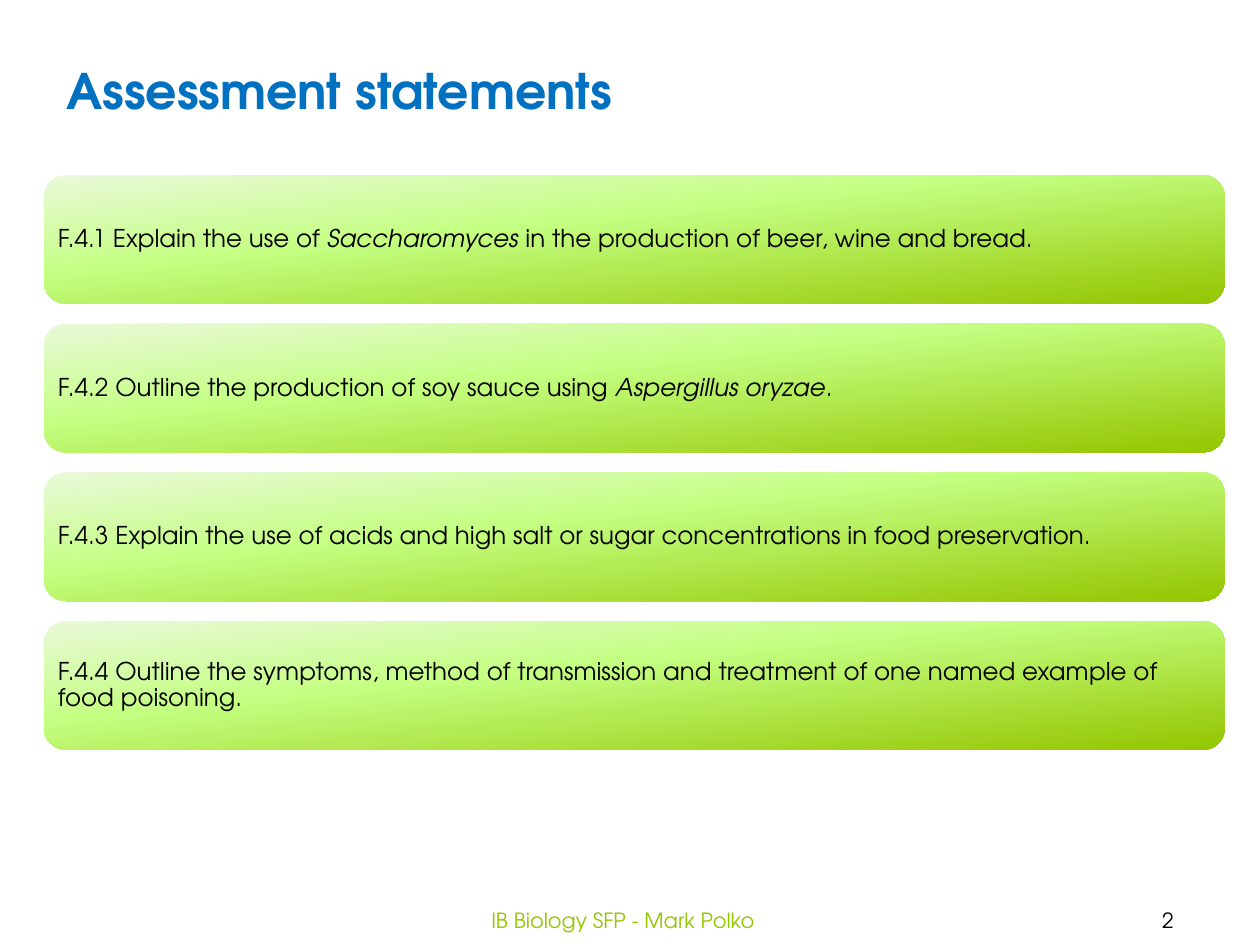
from copy import deepcopy

from pptx import Presentation
from pptx.dml.color import RGBColor
from pptx.enum.shapes import MSO_SHAPE
from pptx.enum.text import MSO_ANCHOR, PP_ALIGN
from pptx.oxml.ns import qn
from pptx.util import Inches, Pt

BLACK = RGBColor(0x00, 0x00, 0x00)
BLUE = RGBColor(0x00, 0x70, 0xC0)
GREEN = RGBColor(0x94, 0xC6, 0x00)
LIME = RGBColor(0xC4, 0xFF, 0x82)
PALE = RGBColor(0xEA, 0xF9, 0xDA)
FONT = "TeX Gyre Adventor"
GRADIENT = ((0, PALE), (0.4, LIME), (1, GREEN))
SIDES = ("left", "top", "right", "bottom")

STATEMENTS = (
    (("F.4.1 Explain the use of ", False), ("Saccharomyces ", True),
     ("in the production of beer, wine and bread.", False)),
    (("F.4.2 Outline the production of soy sauce using ", False),
     ("Aspergillus oryzae", True), (".", False)),
    (("F.4.3 Explain the use of acids and high salt or sugar "
      "concentrations in food preservation.", False),),
    (("F.4.4 Outline the symptoms, method of transmission and treatment "
      "of one named example of food poisoning.", False),),
)


def apply_format(target, values):
    for name, value in values.items():
        setattr(target, name, value)


class SlideBuilder:
    """Holds the slide and its style, and adds each kind of element."""

    def __init__(self, slide):
        self.slide = slide

    def add_runs(self, shape, runs, size, color, bold=False, **paragraph_format):
        paragraph = shape.text_frame.paragraphs[0]
        apply_format(paragraph, paragraph_format)
        for text, italic in runs:
            run = paragraph.add_run()
            run.text = text
            run.font.color.rgb = color
            apply_format(run.font, {"name": FONT, "size": Pt(size),
                                    "bold": bold, "italic": italic})

    def label(self, box, text, size, color, anchor=MSO_ANCHOR.MIDDLE,
              wrap=True, bold=False, align=PP_ALIGN.CENTER):
        shape = self.slide.shapes.add_textbox(*map(Inches, box))
        apply_format(shape.text_frame,
                     {"word_wrap": wrap, "vertical_anchor": anchor})
        self.add_runs(shape, ((text, False),), size, color, bold,
                      alignment=align)

    def card(self, box, runs):
        shape = self.slide.shapes.add_shape(
            MSO_SHAPE.ROUNDED_RECTANGLE, *map(Inches, box))
        shape.shadow.inherit = False
        shape.line.fill.background()
        self.fill_gradient(shape)
        frame_format = {f"margin_{side}": Inches(0.06) for side in SIDES}
        frame_format |= {"word_wrap": True, "vertical_anchor": MSO_ANCHOR.MIDDLE}
        apply_format(shape.text_frame, frame_format)
        self.add_runs(shape, runs, 14, BLACK,
                      alignment=PP_ALIGN.LEFT, line_spacing=0.9)

    def fill_gradient(self, shape):
        shape.fill.gradient()
        shape.fill.gradient_angle = 276
        stop_list = shape._element.spPr.find(qn("a:gradFill")).find(qn("a:gsLst"))
        stop_list.append(deepcopy(stop_list[0]))
        for stop, (position, color) in zip(shape.fill.gradient_stops, GRADIENT):
            stop.position = position
            stop.color.rgb = color


def main():
    presentation = Presentation()
    apply_format(presentation, {"slide_width": Inches(10),
                                "slide_height": Inches(7.5)})
    builder = SlideBuilder(
        presentation.slides.add_slide(presentation.slide_layouts[6]))
    builder.label((8.54, 7.1, 1.46, 0.4), "2", 12, BLACK)
    builder.label((3.03, 7.1, 3.83, 0.4), "IB Biology SFP - Mark Polko", 12, GREEN)
    for index, runs in enumerate(STATEMENTS):
        builder.card((0.35, 1.39 + 1.18 * index, 9.37, 1.02), runs)
    builder.label((0.43, 0.43, 4.59, 0.57), "Assessment statements", 28, BLUE,
                  anchor=MSO_ANCHOR.TOP, wrap=False, bold=True,
                  align=PP_ALIGN.LEFT)
    presentation.save("out.pptx")


if __name__ == "__main__":
    main()
